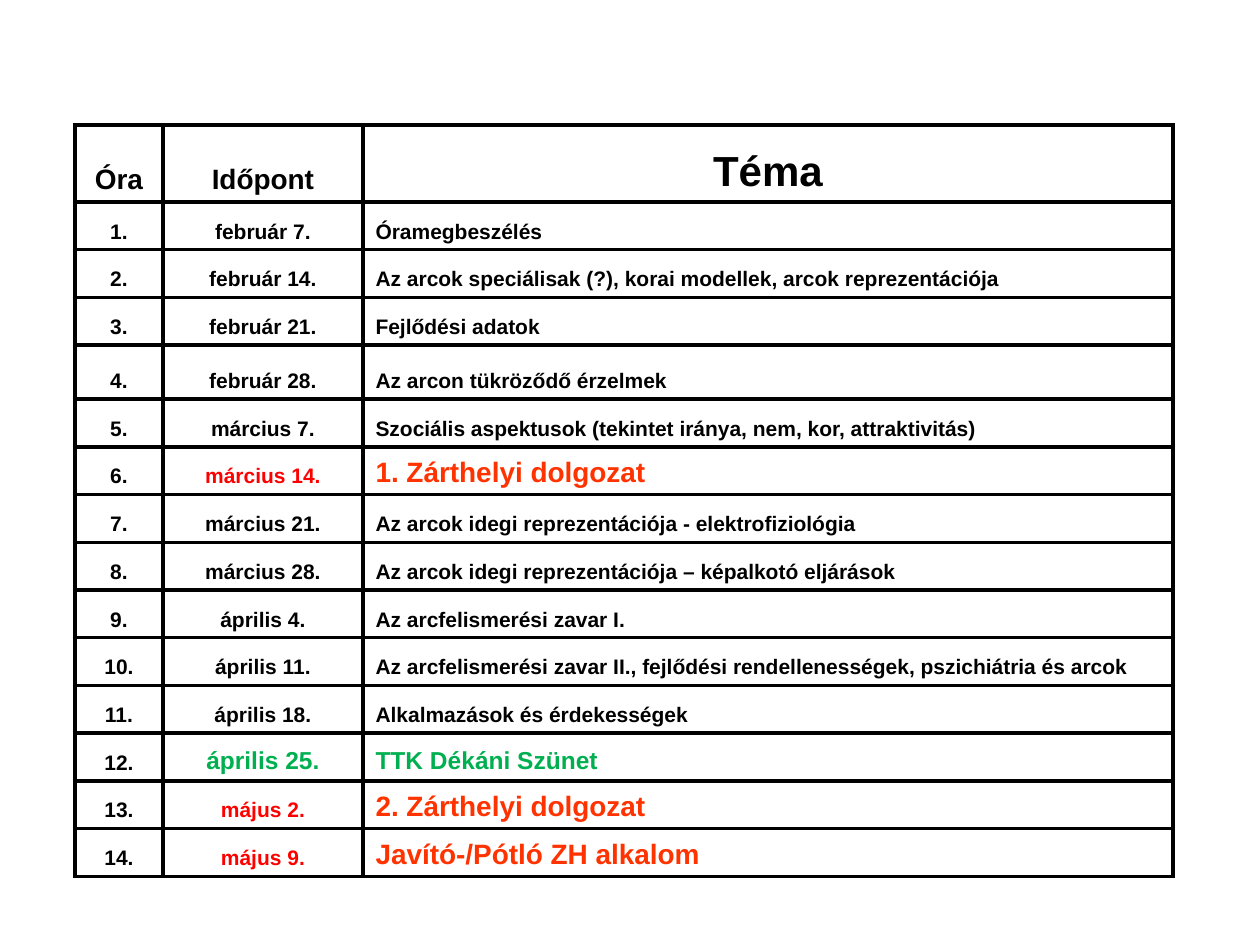
from lxml.etree import SubElement
from pptx import Presentation
from pptx.dml.color import RGBColor
from pptx.enum.text import MSO_ANCHOR, PP_ALIGN
from pptx.oxml.ns import qn
from pptx.util import Emu, Pt

EMU_PER_PX = 914400 / 126

BLACK = RGBColor(0x00, 0x00, 0x00)
RED = RGBColor(0xFF, 0x00, 0x00)
ORANGE = RGBColor(0xFF, 0x33, 0x00)
GREEN = RGBColor(0x00, 0xB0, 0x50)

# Text styles: size in points and colour
PLAIN = (12, BLACK)
HEADING = (16, BLACK)
TITLE = (24, BLACK)
EXAM_DATE = (12, RED)
EXAM = (16, ORANGE)
HOLIDAY = (14, GREEN)

HEADINGS = [("Óra", HEADING), ("Időpont", HEADING), ("Téma", TITLE)]

# Date, topic, date style, topic style
LESSONS = [
    ("február 7.", "Óramegbeszélés", PLAIN, PLAIN),
    ("február 14.", "Az arcok speciálisak (?), korai modellek, arcok reprezentációja", PLAIN, PLAIN),
    ("február 21.", "Fejlődési adatok", PLAIN, PLAIN),
    ("február 28.", "Az arcon tükröződő érzelmek", PLAIN, PLAIN),
    ("március 7.", "Szociális aspektusok (tekintet iránya, nem, kor, attraktivitás)", PLAIN, PLAIN),
    ("március 14.", "1. Zárthelyi dolgozat", EXAM_DATE, EXAM),
    ("március 21.", "Az arcok idegi reprezentációja - elektrofiziológia", PLAIN, PLAIN),
    ("március 28.", "Az arcok idegi reprezentációja – képalkotó eljárások", PLAIN, PLAIN),
    ("április 4.", "Az arcfelismerési zavar I.", PLAIN, PLAIN),
    ("április 11.", "Az arcfelismerési zavar II., fejlődési rendellenességek, pszichiátria és arcok",
     PLAIN, PLAIN),
    ("április 18.", "Alkalmazások és érdekességek", PLAIN, PLAIN),
    ("április 25.", "TTK Dékáni Szünet", HOLIDAY, HOLIDAY),
    ("május 2.", "2. Zárthelyi dolgozat", EXAM_DATE, EXAM),
    ("május 9.", "Javító-/Pótló ZH alkalom", EXAM_DATE, EXAM),
]

LEFT, TOP, HEIGHT = 75, 125, 752
COLUMN_WIDTHS = [88, 200, 810]
HEADER_HEIGHT, TALL_HEIGHT = 77, 54
TALL_ROW = 4
HANGING_INDENT = 48


def px(length):
    return Emu(round(length * EMU_PER_PX))


class SlideBuilder:
    font_name = "Arial"
    border_width = Pt(2.25)

    def __init__(self, slide):
        self.slide = slide

    def table(self, rows, left, top, column_widths, row_heights):
        frame = self.slide.shapes.add_table(
            len(rows), len(column_widths), px(left), px(top),
            px(sum(column_widths)), px(sum(row_heights)))
        table = frame.table
        table.first_row = False
        table.horz_banding = False
        for column, width in zip(table.columns, column_widths):
            column.width = px(width)
        for row, height in zip(table.rows, row_heights):
            row.height = px(height)
        for row_index, contents in enumerate(rows):
            for column_index, (text, style) in enumerate(contents):
                centred = row_index == 0 or column_index < 2
                self.cell(table.cell(row_index, column_index), text, style, centred)

    def cell(self, cell, text, style, centred):
        self.borders(cell)
        cell.fill.background()
        cell.vertical_anchor = MSO_ANCHOR.BOTTOM
        paragraph = cell.text_frame.paragraphs[0]
        paragraph.alignment = PP_ALIGN.CENTER if centred else PP_ALIGN.LEFT
        properties = paragraph._p.get_or_add_pPr()
        properties.set("marL", str(px(HANGING_INDENT)))
        properties.set("indent", str(-px(HANGING_INDENT)))
        self.run(paragraph, text, style)

    def run(self, paragraph, text, style):
        size, colour = style
        run = paragraph.add_run()
        run.text = text
        run.font.name = self.font_name
        run.font.size = Pt(size)
        run.font.bold = True
        run.font.color.rgb = colour

    def borders(self, cell):
        properties = cell._tc.get_or_add_tcPr()
        for side in ("lnL", "lnR", "lnT", "lnB"):
            line = SubElement(properties, qn(f"a:{side}"), w=str(self.border_width))
            fill = SubElement(line, qn("a:solidFill"))
            SubElement(fill, qn("a:srgbClr"), val=str(BLACK))


def main():
    presentation = Presentation()
    presentation.slide_width = px(1260)
    presentation.slide_height = px(945)
    builder = SlideBuilder(presentation.slides.add_slide(presentation.slide_layouts[6]))

    # Lessons share the height left by the header and the one taller row
    lesson_height = (HEIGHT - HEADER_HEIGHT - TALL_HEIGHT) / (len(LESSONS) - 1)
    row_heights = [HEADER_HEIGHT] + [lesson_height] * len(LESSONS)
    row_heights[TALL_ROW] = TALL_HEIGHT

    # Course schedule
    rows = [HEADINGS]
    for number, (date, topic, date_style, topic_style) in enumerate(LESSONS, start=1):
        rows.append([(f"{number}.", PLAIN), (date, date_style), (topic, topic_style)])
    builder.table(rows, LEFT, TOP, COLUMN_WIDTHS, row_heights)

    presentation.save("out.pptx")


if __name__ == "__main__":
    main()
